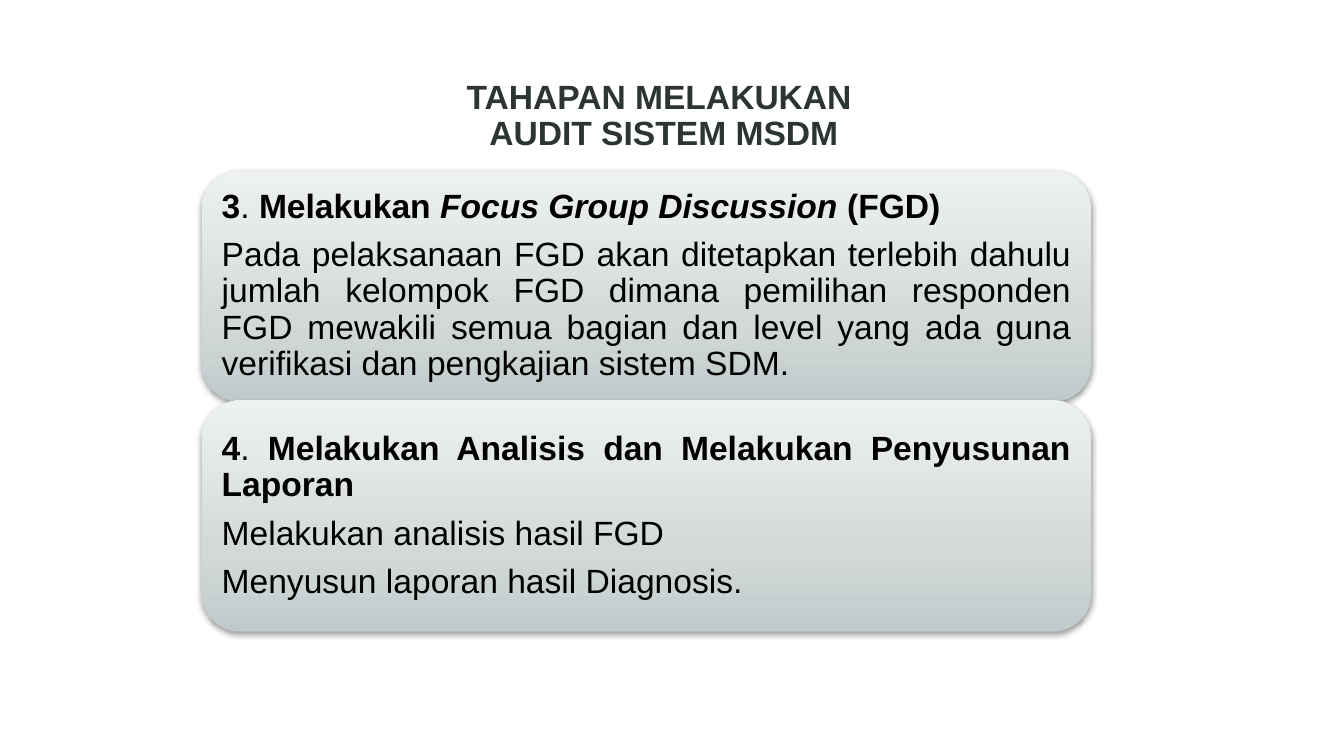
from copy import deepcopy
from dataclasses import dataclass
from typing import NamedTuple

from lxml.etree import SubElement
from pptx import Presentation
from pptx.dml.color import RGBColor
from pptx.enum.shapes import MSO_SHAPE
from pptx.enum.text import MSO_ANCHOR, PP_ALIGN
from pptx.oxml.ns import qn
from pptx.slide import Slide
from pptx.util import Inches, Pt


@dataclass(frozen=True)
class Theme:
    font: str = "Arial"
    size: float = 18
    ink: str = "000000"
    head: str = "2C3434"
    shade: str = "000000"
    stops: tuple = ((0, "C0CACA"), (0.35, "D3D9D9"), (1, "EEF1F1"))
    lead: float = 0.9
    gap: float = 6.3


class Run(NamedTuple):
    text: str
    bold: bool = False
    slant: bool = False


class Box(NamedTuple):
    left: float
    top: float
    width: float
    height: float


class Inset(NamedTuple):
    side: float
    top: float
    base: float


class Card(NamedTuple):
    paras: list[list[Run]]


THEME = Theme()
FIRST = Box(1.5, 1.27, 6.62, 1.72)
PITCH = 1.71
PAD = 0.08

TITLE = [
    [Run("TAHAPAN MELAKUKAN ", True)],
    [Run("AUDIT SISTEM MSDM", True)],
]
CARDS = [
    Card([
        [
            Run("3", True),
            Run(". "),
            Run("Melakukan ", True),
            Run("Focus Group Discussion", True, True),
            Run(" (FGD)", True),
        ],
        [Run(
            "Pada pelaksanaan FGD akan ditetapkan terlebih dahulu jumlah "
            "kelompok FGD dimana pemilihan responden FGD mewakili semua "
            "bagian dan level yang ada guna verifikasi dan pengkajian "
            "sistem SDM."
        )],
    ]),
    Card([
        [
            Run("4", True),
            Run(". "),
            Run("Melakukan Analisis dan Melakukan Penyusunan Laporan", True),
        ],
        [Run("Melakukan analisis hasil FGD")],
        [Run("Menyusun laporan hasil Diagnosis.")],
    ]),
]


def write(slide: Slide, box: Box, paras: list[list[Run]], inset: Inset,
          align: PP_ALIGN, color: str, gap: float) -> None:
    frame = slide.shapes.add_textbox(*map(Inches, box)).text_frame
    frame.word_wrap = True
    frame.vertical_anchor = MSO_ANCHOR.MIDDLE
    frame.margin_left = frame.margin_right = Inches(inset.side)
    frame.margin_top = Inches(inset.top)
    frame.margin_bottom = Inches(inset.base)
    for index, runs in enumerate(paras):
        para = frame.add_paragraph() if index else frame.paragraphs[0]
        para.alignment = align
        para.line_spacing = THEME.lead
        para.space_after = Pt(gap)
        for item in runs:
            run = para.add_run()
            run.text = item.text
            run.font.name = THEME.font
            run.font.size = Pt(THEME.size)
            run.font.bold = item.bold
            run.font.italic = item.slant
            run.font.color.rgb = RGBColor.from_string(color)


def panel(slide: Slide, box: Box) -> None:
    shape = slide.shapes.add_shape(
        MSO_SHAPE.ROUNDED_RECTANGLE, *map(Inches, box))
    shape.line.fill.background()
    shape.fill.gradient()
    shape.fill.gradient_angle = 90
    props = shape._element.spPr
    ramp = props.find(".//" + qn("a:gsLst"))
    ramp.insert(1, deepcopy(ramp[0]))
    for stop, (place, color) in zip(shape.fill.gradient_stops, THEME.stops):
        stop.position = place
        stop.color.rgb = RGBColor.from_string(color)
    shape.shadow.inherit = False
    shadow = SubElement(
        props.find(qn("a:effectLst")), qn("a:outerShdw"),
        blurRad=str(Pt(3.1)), dist=str(Pt(1.6)), dir="5400000",
        rotWithShape="0")
    tint = SubElement(shadow, qn("a:srgbClr"), val=THEME.shade)
    SubElement(tint, qn("a:alpha"), val="38000")


def main() -> None:
    deck = Presentation()
    deck.slide_width = Inches(10)
    deck.slide_height = Inches(10 * 9 / 16)
    slide = deck.slides.add_slide(deck.slide_layouts[6])
    for index, card in enumerate(CARDS):
        box = FIRST._replace(top=FIRST.top + index * PITCH)
        inner = Box(box.left + PAD, box.top + PAD,
                    box.width - 2 * PAD, box.height - 2 * PAD)
        panel(slide, box)
        write(slide, inner, card.paras, Inset(0.07, 0.07, 0.07),
              PP_ALIGN.JUSTIFY, THEME.ink, THEME.gap)
    write(slide, Box(1.39, 0.49, 7.1, 1.03), TITLE, Inset(0.09, 0.04, 0.31),
          PP_ALIGN.CENTER, THEME.head, 0)
    deck.save("out.pptx")


if __name__ == "__main__":
    main()
